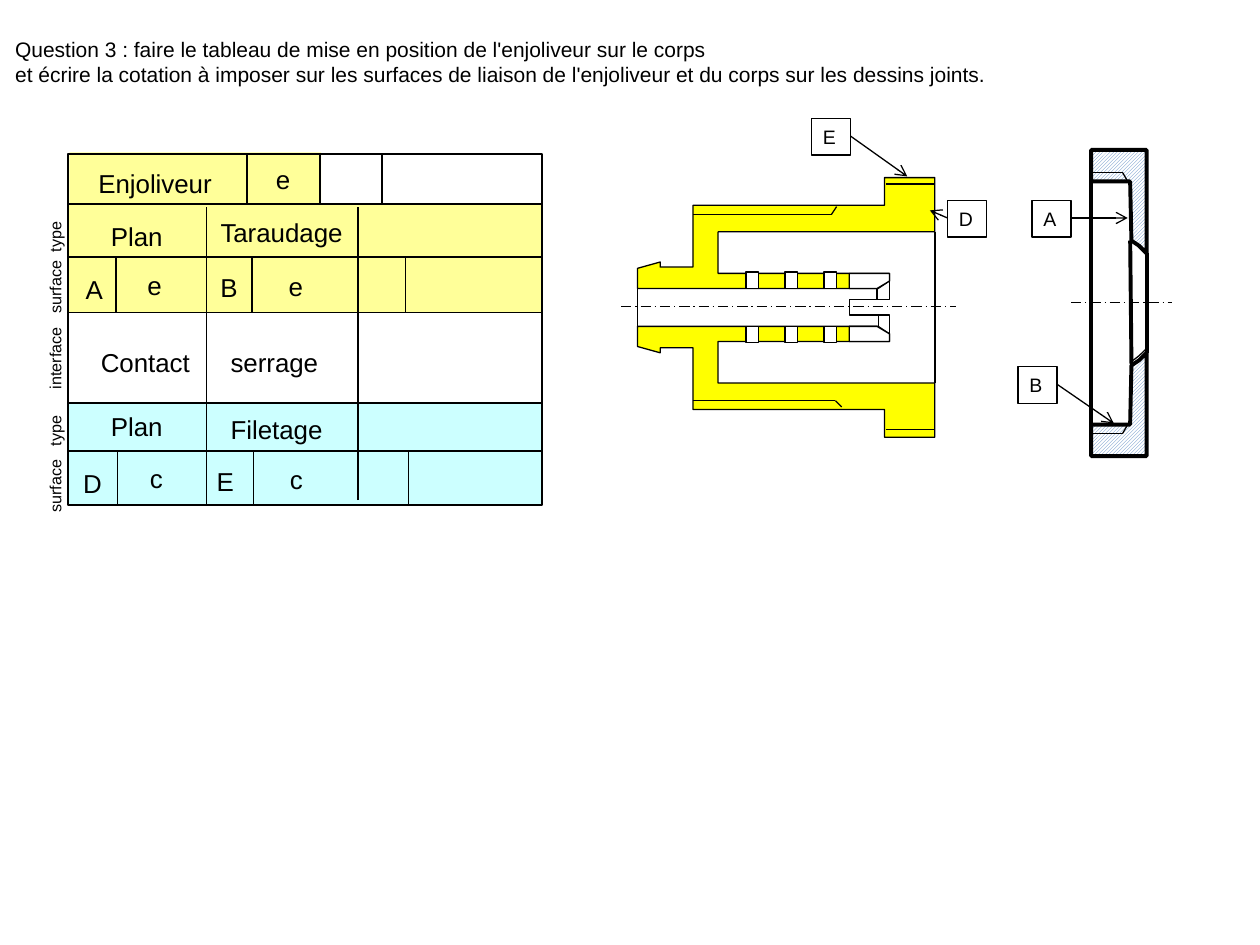
from pptx import Presentation
from pptx.dml.color import RGBColor
from pptx.enum.dml import MSO_LINE, MSO_PATTERN
from pptx.enum.shapes import MSO_CONNECTOR, MSO_SHAPE
from pptx.enum.text import MSO_ANCHOR, MSO_AUTO_SIZE, PP_ALIGN
from pptx.oxml.ns import qn
from pptx.util import Pt
from lxml import etree

PX = 9144
RECT, ARC = MSO_SHAPE.RECTANGLE, MSO_SHAPE.ARC
STRAIGHT = MSO_CONNECTOR.STRAIGHT
AXIS_DASH = MSO_LINE.LONG_DASH_DOT
HATCH = MSO_PATTERN.LIGHT_UPWARD_DIAGONAL
FIT, TOP, LEFT = MSO_AUTO_SIZE.SHAPE_TO_FIT_TEXT, MSO_ANCHOR.TOP, PP_ALIGN.LEFT

THEME = {
    "font": "Arial", "ink": "000000", "white": "FFFFFF", "hatch": "4F81BD",
    "trim": "FFFF99", "body": "CCFFFF", "section": "FFFF00",
    "title": 12, "cell": 14.8, "label": 11.1, "side": 9.2,
    "thin": 0.75, "grid": 1, "thick": 2.25,
}

TITLE = [
    "Question 3 : faire le tableau de mise en position de l'enjoliveur sur le corps",
    "et écrire la cotation à imposer sur les surfaces de liaison de l'enjoliveur et du corps sur les dessins joints.",
]
SIDE = "surface\ttype\tinterface\tsurface\ttype"
SIDE_TABS = [53, 98, 158, 207]
BANDS = [(55, 121, 200, 41, "trim"), (54, 162, 376, 86, "trim"), (54, 320, 376, 81, "body")]
FRAME = (54, 122, 376, 279)
ROW_LINES = [162, 204, 248, 320, 358]
HEAD_SPLITS = [196, 254, 303]
COLUMN_LINES = [(284, 397), (164, 400)]
CELL_SPLITS = [(205, 248, [92, 200, 322]), (359, 401, [93, 201, 324])]
CELLS = [
    ("Enjoliveur", 69, 128, 111), ("e", 210, 125, 32),
    ("Plan", 79, 170, 62), ("Taraudage", 166, 167, 118),
    ("A", 59, 212, 34), ("e", 108, 209, 32), ("B", 166, 211, 34), ("e", 220, 210, 32),
    ("Contact", 71, 270, 92), ("serrage", 174, 270, 90),
    ("Plan", 79, 321, 62), ("Filetage", 174, 323, 94),
    ("D", 57, 366, 35), ("c", 110, 362, 31), ("E", 163, 365, 34), ("c", 221, 363, 31),
]

RING_SUM, CORE_SUM = 481, 488
RING = [(866, 119), (866, 144), (897, 144), (898, 191), (904, 195), (910, 201), (910, 119)]
RING_THREAD = [(866, 144, 898, 144), (866, 137, 891, 137), (891, 137, 895, 144)]
RING_EDGES = [(866, 119, 866, 344), (897, 191, 898, 289), (910, 201, 910, 280)]
RING_ARC = (810, 182, 114, 114)
ARC_ANGLES = (181.143, 191.01)
CORE = [
    (742, 184), (742, 141), (702, 141), (702, 163), (550, 163), (550, 212), (524, 212),
    (524, 208), (506, 213), (506, 229), (697, 229), (706, 223), (706, 217), (570, 217), (570, 184),
]
HOLES = [(592 + 31 * i, 216, 10, 13) for i in range(3)]
CORE_LINES = [
    (703, 146, 741, 146), (703, 341, 741, 341),
    (550, 170, 660, 170), (660, 170, 664, 164),
    (550, 318, 663, 318), (663, 318, 668, 323),
    (506, 229, 506, 259), (696, 229, 696, 237),
    (742, 184, 742, 304), (697, 251, 697, 259),
]
SLOT = [(706, 222), (706, 238), (674, 238), (674, 250), (706, 250), (706, 265)]
TIP = [(674, 229), (674, 217), (706, 217), (706, 223), (696, 229)]
AXES = [(850, 240, 930, 240), (493, 243, 759, 243)]
CALLOUTS = [
    ("A", 819, 159, (850, 173, 895, 173)), ("B", 808, 291, (839, 305, 884, 336)),
    ("D", 752, 159, (752, 173, 738, 167)), ("E", 644, 94, (675, 108, 720, 140)),
]

prs = Presentation()
prs.slide_width, prs.slide_height = 1000 * PX, 750 * PX
s = prs.slides.add_slide(prs.slide_layouts[6])


def color(name):
    return RGBColor.from_string(THEME[name])


def style(sp, fill=None, width=None):
    sp.shadow.inherit = False
    if fill == "hatch":
        sp.fill.patterned()
        sp.fill.pattern = HATCH
        sp.fill.fore_color.rgb = color("hatch")
        sp.fill.back_color.rgb = color("white")
    elif fill:
        sp.fill.solid()
        sp.fill.fore_color.rgb = color(fill)
    else:
        sp.fill.background()
    if width:
        sp.line.color.rgb = color("ink")
        sp.line.width = Pt(THEME[width])
    else:
        sp.line.fill.background()
    return sp


def shape(kind, box, fill=None, width=None):
    return style(s.shapes.add_shape(kind, *(v * PX for v in box)), fill, width)


def outline(points, fill=None, width="thin", closed=True):
    fb = s.shapes.build_freeform(*points[0], scale=PX)
    fb.add_line_segments(points[1:], close=closed)
    return style(fb.convert_to_shape(), fill, width)


def line(ends, width="thin", dash=None, arrow=False):
    c = s.shapes.add_connector(STRAIGHT, *(v * PX for v in ends))
    c.line.color.rgb = color("ink")
    c.line.width = Pt(THEME[width])
    if dash:
        c.line.dash_style = dash
    spPr = c._element.spPr
    if arrow:
        etree.SubElement(spPr.find(qn("a:ln")), qn("a:tailEnd"), type="arrow")
    etree.SubElement(spPr, qn("a:effectLst"))


def write(sp, paragraphs, size, wrap=False):
    tf = sp.text_frame
    tf.word_wrap, tf.auto_size, tf.vertical_anchor = wrap, FIT, TOP
    tf.margin_left = tf.margin_right = 9 * PX
    tf.margin_top = tf.margin_bottom = 5 * PX
    for i, text in enumerate(paragraphs):
        p = tf.add_paragraph() if i else tf.paragraphs[0]
        p.alignment = LEFT
        r = p.add_run()
        r.text = text
        r.font.name, r.font.size = THEME["font"], Pt(THEME[size])
        r.font.color.rgb = color("ink")
    return tf


def textbox(box, paragraphs, size, wrap=False):
    sp = s.shapes.add_textbox(*(v * PX for v in box))
    write(sp, paragraphs, size, wrap)
    return sp


def mirror(points, total):
    return [(x, total - y) for x, y in points]


def draw_table():
    for *box, fill in BANDS:
        shape(RECT, box, fill)
    shape(RECT, FRAME, width="grid")
    for y in ROW_LINES:
        line((55, y, 430, y), "grid")
    for x in HEAD_SPLITS:
        line((x, 122, x, 162), "grid")
    for x, bottom in COLUMN_LINES:
        line((x, bottom, x, 164), "grid")
    for top, bottom, xs in CELL_SPLITS:
        for x in xs:
            line((x, top, x, bottom))
    for text, x, y, w in CELLS:
        textbox((x, y, w, 35), [text], "cell")
    side = textbox((-77, 268, 256, 40), [SIDE], "side", True)
    side.rotation = 270
    tabs = etree.SubElement(side.text_frame.paragraphs[0]._p.get_or_add_pPr(), qn("a:tabLst"))
    for x in SIDE_TABS:
        etree.SubElement(tabs, qn("a:tab"), pos=str(x * PX), algn="l")


def draw_ring():
    for points in (mirror(RING, RING_SUM), RING):
        outline(points, "hatch", "thick")
    for x1, y1, x2, y2 in RING_THREAD:
        line((x1, y1, x2, y2))
        line((x1, RING_SUM - y1, x2, RING_SUM - y2))
    for ends in RING_EDGES:
        line(ends, "thick")
    for flipped in (False, True):
        arc = shape(ARC, RING_ARC, width="thin")
        arc.adjustments[0], arc.adjustments[1] = ARC_ANGLES
        if flipped:
            arc._element.spPr.find(qn("a:xfrm")).set("flipV", "1")


def draw_core():
    for points in (CORE, mirror(CORE, CORE_SUM)):
        outline(points, "section")
    for x, y, w, h in HOLES:
        for top in (y, CORE_SUM - y - h):
            shape(RECT, (x, top, w, h), "white", "thin")
    for ends in CORE_LINES:
        line(ends)
    outline(SLOT, closed=False)
    for points in (TIP, mirror(TIP, CORE_SUM)):
        outline(points, "white")


draw_table()
draw_ring()
draw_core()
for ends in AXES:
    line(ends, dash=AXIS_DASH)
for text, x, y, ends in CALLOUTS:
    write(shape(RECT, (x, y, 31, 29), width="thin"), [text], "label")
    line(ends, arrow=True)
textbox((3, 24, 982, 50), TITLE, "title", True)
prs.save("out.pptx")
